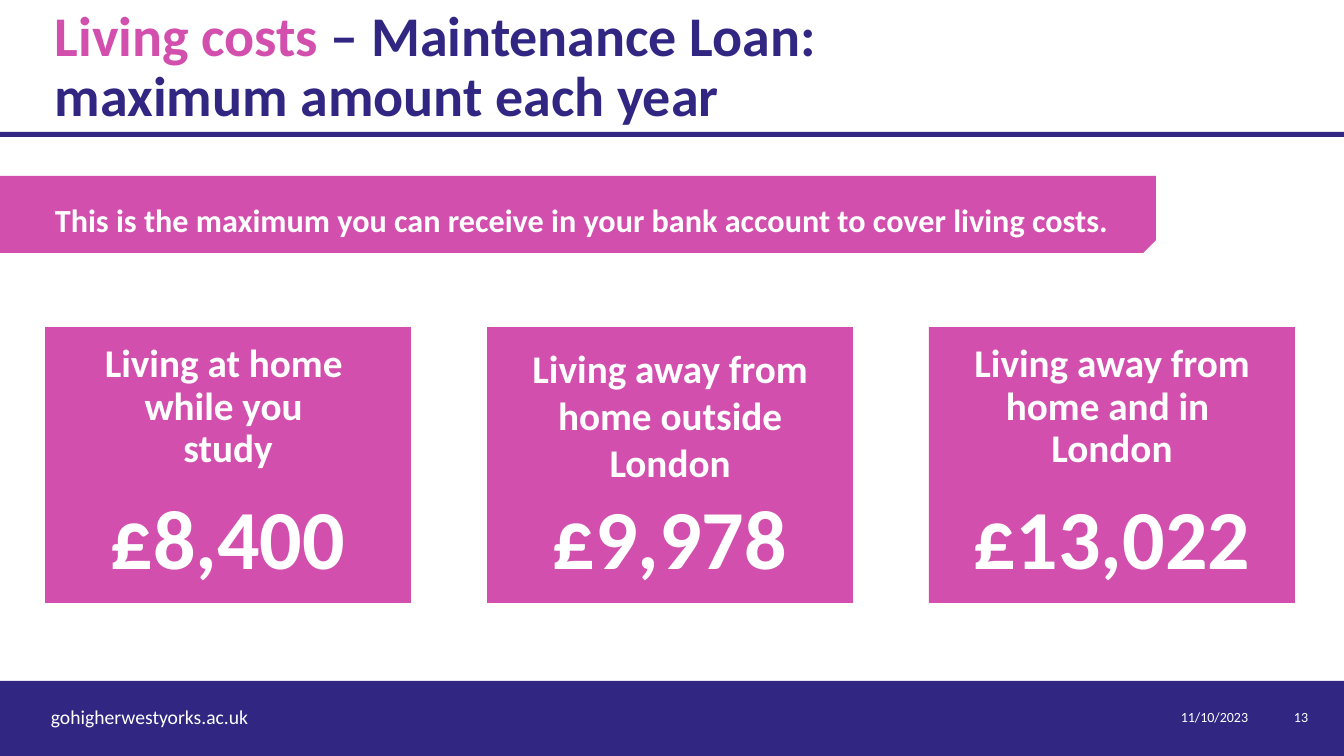
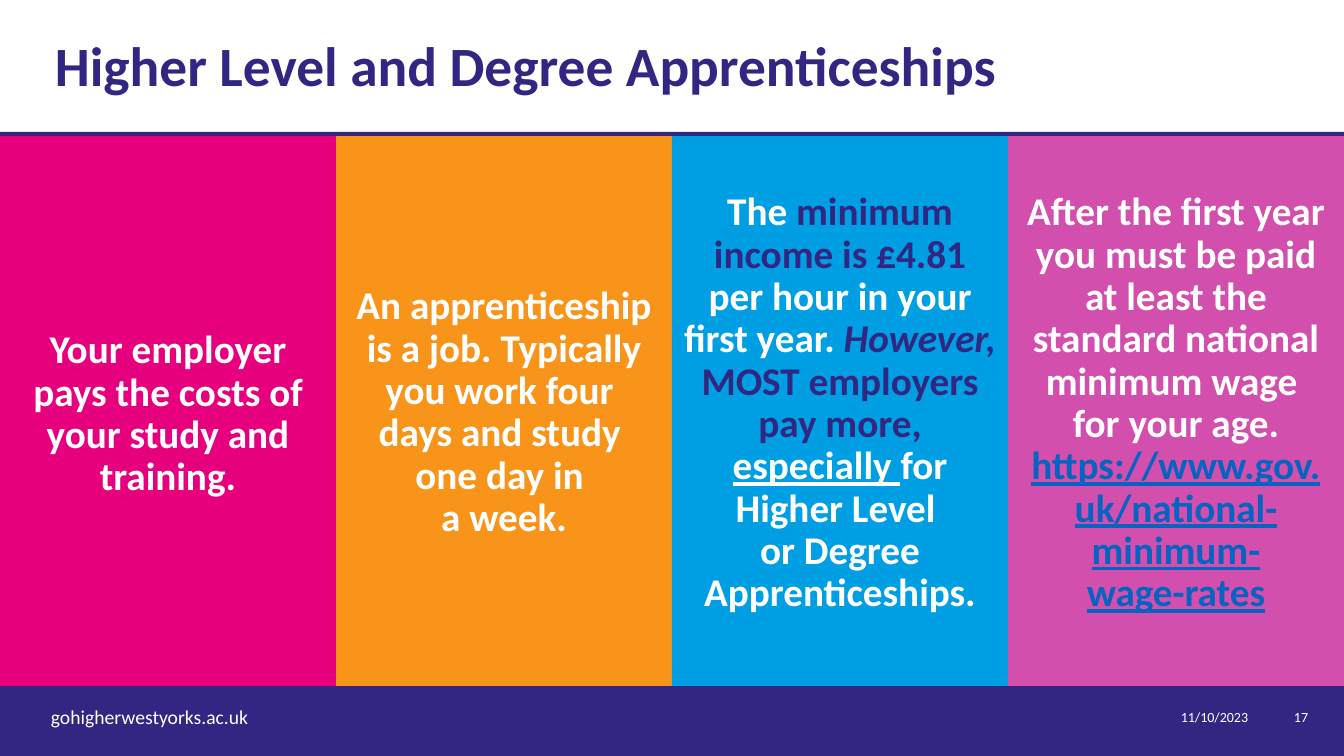
from dataclasses import dataclass

from pptx import Presentation
from pptx import util as u
from pptx.dml import color
from pptx.enum import shapes, text
from pptx.oxml import ns

PX = 914400 / 100.8
W, H = 1344, 756


@dataclass(frozen=True)
class Theme:
    font: str = "Calibri"
    navy: str = "312783"
    pink: str = "D34FAE"
    magenta: str = "E6007E"
    orange: str = "F8941A"
    blue: str = "009FE3"
    link: str = "0563C1"
    white: str = "FFFFFF"
    title: float = 40
    long_title: float = 39.6
    banner: float = 23
    body: float = 28
    amount: float = 60
    site: float = 14
    small: float = 10


T = Theme()
ALIGN = text.PP_ALIGN
ANCHOR = text.MSO_ANCHOR


def emu(*lengths):
    return [u.Emu(round(n * PX)) for n in lengths]


def add_block(s, box, fill, kind=shapes.MSO_SHAPE.RECTANGLE):
    sp = s.shapes.add_shape(kind, *emu(*box))
    sp.shadow.inherit = False
    sp.fill.solid()
    sp.fill.fore_color.rgb = color.RGBColor.from_string(fill)
    sp.line.fill.background()
    return sp


def add_text(s, box, runs, size, bold=True, align=ALIGN.LEFT,
             anchor=ANCHOR.TOP, spacing=0.9):
    """Each run is (words, colour, styles); styles holds "i" and/or "u"."""
    tf = s.shapes.add_textbox(*emu(*box)).text_frame
    tf.word_wrap = True
    tf.vertical_anchor = anchor
    p = tf.paragraphs[0]
    p.alignment = align
    p.line_spacing = spacing
    for words, fill, styles in runs:
        for i, line in enumerate(words.split("\n")):
            if i:
                p.add_line_break()
            r = p.add_run()
            r.text = line
            r.font.name = T.font
            r.font.size = u.Pt(size)
            r.font.bold = bold
            r.font.italic = "i" in styles
            r.font.underline = "u" in styles
            r.font.color.rgb = color.RGBColor.from_string(fill)


def white(words):
    return [(words, T.white, "")]


def add_frame(prs, title, size, number):
    """Blank slide with the title, rule and footer band."""
    s = prs.slides.add_slide(prs.slide_layouts[6])
    top, height = 681, 75
    add_block(s, (0, top, W, height), T.navy)
    for x, w, words, pt, align in (
            (41, 219, "gohigherwestyorks.ac.uk", T.site, ALIGN.LEFT),
            (1160, 98, "11/10/2023", T.small, ALIGN.RIGHT),
            (1280, 38, number, T.small, ALIGN.RIGHT)):
        add_text(s, (x, top, w, height), white(words), pt, False, align,
                 ANCHOR.MIDDLE)
    add_block(s, (0, 132, W, 5), T.navy)
    add_text(s, (45, 0, 1138, 137), title, size, anchor=ANCHOR.MIDDLE)
    return s


def add_banner(s, box, words):
    x, y, w, h = box
    sp = add_block(s, box, T.pink, shapes.MSO_SHAPE.SNIP_1_RECTANGLE)
    # Flip so that the cut corner sits at the bottom
    sp.element.spPr.find(ns.qn("a:xfrm")).set("flipV", "1")
    add_text(s, (x + 45, y, w - 68, h), white(words), T.banner, spacing=1.5)


def add_card(s, box, label, spacing, amount):
    x, y, w, h = box
    add_block(s, box, T.pink)
    add_text(s, (x, y + 12, w, 141), white(label), T.body,
             align=ALIGN.CENTER, spacing=spacing)
    add_text(s, (x, y + 154, w, h - 154), white(amount), T.amount,
             align=ALIGN.CENTER, spacing=1)


def add_column(s, box, fill, text_top, runs):
    x, y, w, h = box
    add_block(s, box, fill)
    add_text(s, (x + 1, text_top, w - 2, y + h - text_top), runs, T.body,
             align=ALIGN.CENTER)


def loan_slide(prs):
    title = [("Living costs ", T.pink, ""),
             ("– Maintenance Loan: \nmaximum amount each year", T.navy, "")]
    s = add_frame(prs, title, T.title, "13")
    add_banner(s, (0, 176, 1156, 77),
               "This is the maximum you can receive in your bank account "
               "to cover living costs.")
    cards = [
        ("Living at home \nwhile you \nstudy", 0.9, "£8,400"),
        ("Living away from home outside London", 1, "£9,978"),
        ("Living away from home and in \nLondon", 0.9, "£13,022"),
    ]
    left, width, gap = 45, 366, 76
    for i, card in enumerate(cards):
        add_card(s, (left + i * (width + gap), 327, width, 276), *card)


def apprenticeship_slide(prs):
    title = [("Higher Level and Degree Apprenticeships", T.navy, "")]
    s = add_frame(prs, title, T.long_title, "17")
    columns = [
        (T.magenta, 325, white(
            "Your employer pays the costs of your study and training.")),
        (T.orange, 281, white(
            "An apprenticeship is a job. Typically you work four \n"
            "days and study \none day in \na week.")),
        (T.blue, 187, [
            ("The ", T.white, ""),
            ("minimum income is £4.81 ", T.navy, ""),
            ("per hour in your first year. ", T.white, ""),
            ("However,", T.navy, "i"),
            (" MOST employers pay more, ", T.navy, ""),
            ("especially ", T.white, "u"),
            ("for Higher Level \nor Degree Apprenticeships.", T.white, "")]),
        (T.pink, 187, [
            ("After the first year you must be paid at least the standard "
             "national minimum wage \nfor your age. ", T.white, ""),
            ("https://www.gov.\nuk/national-minimum-\nwage-rates",
             T.link, "u")]),
    ]
    width = W // len(columns)
    for i, column in enumerate(columns):
        add_column(s, (i * width, 136, width, 550), *column)


def main():
    prs = Presentation()
    prs.slide_width, prs.slide_height = emu(W, H)
    loan_slide(prs)
    apprenticeship_slide(prs)
    prs.save("out.pptx")


if __name__ == "__main__":
    main()
